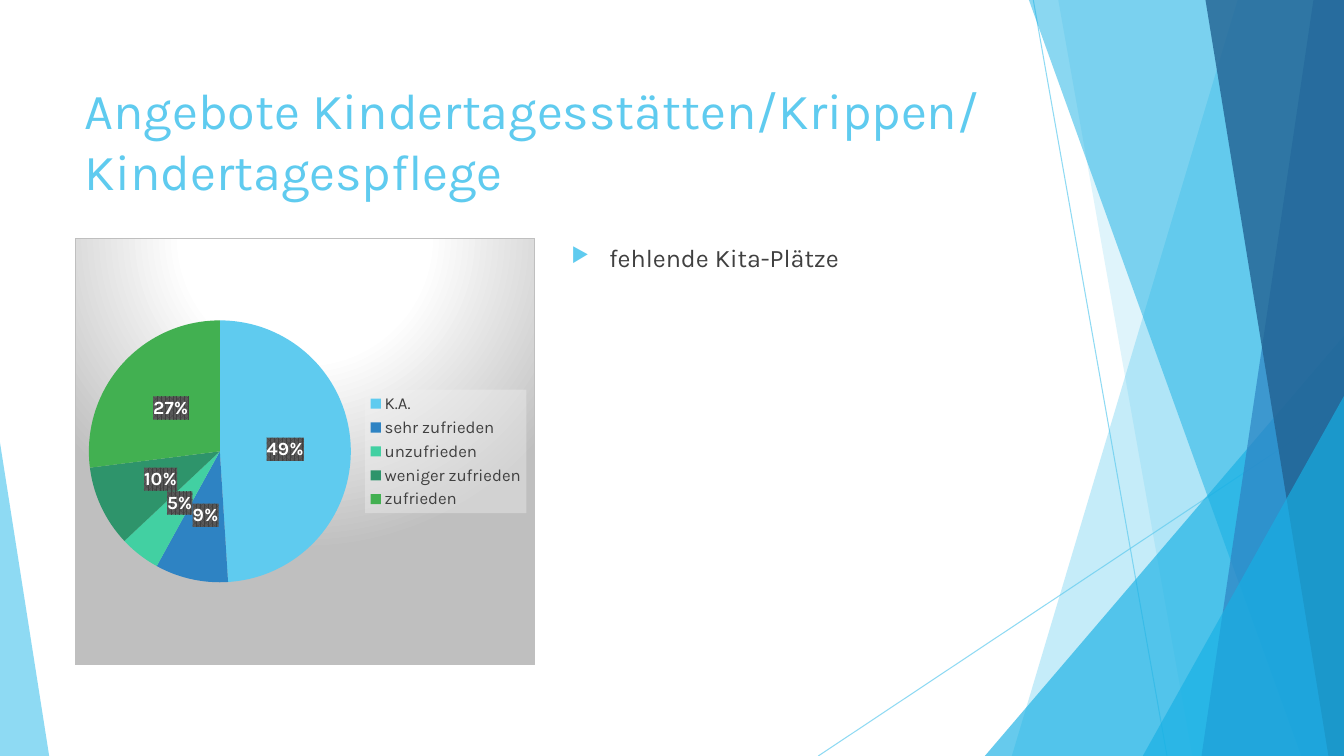
from lxml import etree
from pptx import Presentation
from pptx.chart.data import CategoryChartData
from pptx.dml.color import RGBColor
from pptx.enum.chart import XL_CHART_TYPE, XL_LABEL_POSITION, XL_LEGEND_POSITION
from pptx.enum.shapes import MSO_CONNECTOR, MSO_SHAPE
from pptx.enum.text import MSO_ANCHOR
from pptx.oxml import parse_xml
from pptx.oxml.ns import nsdecls, qn
from pptx.util import Cm, Pt

FONT = "Karla"
SKY = RGBColor(0x5F, 0xCB, 0xEF)
CYAN = RGBColor(0x17, 0xB0, 0xE4)
BLUE = RGBColor(0x2E, 0x83, 0xC3)
NAVY = RGBColor(0x22, 0x62, 0x92)
MINT = RGBColor(0x42, 0xD0, 0xA2)
TEAL = RGBColor(0x2E, 0x94, 0x6B)
GREEN = RGBColor(0x42, 0xB0, 0x51)
WHITE = RGBColor(0xFF, 0xFF, 0xFF)
DARK = RGBColor(0x40, 0x40, 0x40)
BLACK = RGBColor(0, 0, 0)

WIDTH, HEIGHT = 33.87, 19.05


def set_color(fill, color, opacity):
    """Make a fill solid, with its opacity in percent."""
    fill.solid()
    fill.fore_color.rgb = color
    clr = fill._xPr.find(".//" + qn("a:srgbClr"))
    etree.SubElement(clr, qn("a:alpha"), val=str(opacity * 1000))


def set_font(font, size, color, bold=False):
    font.name, font.size, font.bold = FONT, Pt(size), bold
    font.color.rgb = color


presentation = Presentation()
presentation.slide_width, presentation.slide_height = Cm(WIDTH), Cm(HEIGHT)
slide = presentation.slides.add_slide(presentation.slide_layouts[6])
shapes = slide.shapes

# Thin lines behind the facets
for x1, y1, x2, y2 in [(26.04, 0, 29.41, HEIGHT), (WIDTH, 10.24, 20.62, HEIGHT)]:
    line = shapes.add_connector(MSO_CONNECTOR.STRAIGHT, Cm(x1), Cm(y1), Cm(x2), Cm(y2))
    line.line.width = Pt(0.75)
    set_color(line.line.fill, SKY, 70)
    etree.SubElement(line._element.spPr, qn("a:effectLst"))

# Bands reach the right edge: top x, bottom x, color, opacity.
# Triangles: left, top, width, apex, color, opacity.
facets = [
    (31.19, 25.5, SKY, 36),
    (26.67, 30.05, SKY, 20),
    (24.82, 8.46, 9.05, 1, CYAN, 66),
    (25.93, 32.79, CYAN, 50),
    (33.1, 30.28, BLUE, 70),
    (30.38, 33.48, NAVY, 80),
    (28.8, 9.98, 5.07, 1, CYAN, 66),
    (0, 11.15, 1.24, 0, SKY, 70),
]
for *geometry, color, opacity in facets:
    if len(geometry) == 2:
        top_x, bottom_x = geometry
        builder = shapes.build_freeform(Cm(top_x), Cm(0))
        builder.add_line_segments(
            [(Cm(WIDTH), Cm(0)), (Cm(WIDTH), Cm(HEIGHT)), (Cm(bottom_x), Cm(HEIGHT))])
        facet = builder.convert_to_shape()
    else:
        left, top, width, apex = geometry
        facet = shapes.add_shape(MSO_SHAPE.ISOSCELES_TRIANGLE, Cm(left), Cm(top),
                                 Cm(width), Cm(HEIGHT - top))
        facet.adjustments[0] = apex
    set_color(facet.fill, color, opacity)
    facet.line.fill.background()
    facet.shadow.inherit = False

# Title and bullet
texts = [
    ("Angebote Kindertagesstätten/Krippen/ Kindertagespflege",
     (1.88, 1.7, 23.88, 3.66), 36, SKY, MSO_ANCHOR.MIDDLE),
    ("fehlende Kita-Plätze", (14.15, 5.99, 11.63, 10.77), 18, DARK, MSO_ANCHOR.TOP),
]
for text, box, size, color, anchor in texts:
    frame = shapes.add_textbox(*map(Cm, box)).text_frame
    frame.word_wrap = True
    frame.vertical_anchor = anchor
    paragraph = frame.paragraphs[0]
    paragraph.text = text
    set_font(paragraph.runs[0].font, size, color)

paragraph.space_before = Pt(10)
properties = paragraph._p.get_or_add_pPr()
properties.set("marL", str(Cm(0.95)))
properties.set("indent", str(-Cm(0.95)))
bullet_color = etree.SubElement(properties, qn("a:buClr"))
etree.SubElement(bullet_color, qn("a:srgbClr"), val=str(SKY))
etree.SubElement(properties, qn("a:buSzPct"), val="80000")
etree.SubElement(properties, qn("a:buChar"), char="▶")

# Pie chart
answers = {
    "K.A.": (49, SKY),
    "sehr zufrieden": (9, BLUE),
    "unzufrieden": (5, MINT),
    "weniger zufrieden": (10, TEAL),
    "zufrieden": (27, GREEN),
}
data = CategoryChartData()
data.categories = list(answers)
data.add_series("Series 1", [value for value, _ in answers.values()])
chart = shapes.add_chart(XL_CHART_TYPE.PIE, Cm(1.88), Cm(5.99), Cm(11.61), Cm(10.77), data).chart
chart.has_title = False
set_font(chart.font, 10, BLACK)
chart.has_legend = True
legend = chart.legend
legend.position = XL_LEGEND_POSITION.RIGHT
legend.include_in_layout = False
set_font(legend.font, 12, DARK)

plot = chart.plots[0]
plot.vary_by_categories = True
for index, (_, color) in enumerate(answers.values()):
    fill = plot.series[0].points[index].format.fill
    fill.solid()
    fill.fore_color.rgb = color

labels = plot.series[0].data_labels
labels.show_percentage = True
labels.show_value = False
labels.number_format = "0%"
labels.number_format_is_linked = False
labels.position = XL_LABEL_POSITION.CENTER
set_font(labels.font, 13.3, WHITE, bold=True)

# Backgrounds of chart, legend and labels
backgrounds = [
    (chart._chartSpace,
     '<a:gradFill><a:gsLst><a:gs pos="0"><a:srgbClr val="FFFFFF"/></a:gs>'
     '<a:gs pos="39000"><a:srgbClr val="FFFFFF"/></a:gs>'
     '<a:gs pos="100000"><a:srgbClr val="BFBFBF"/></a:gs></a:gsLst>'
     '<a:path path="circle"><a:fillToRect l="50000" t="-80000" r="50000" b="180000"/></a:path>'
     '</a:gradFill><a:ln w="9525"><a:solidFill><a:srgbClr val="BFBFBF"/></a:solidFill></a:ln>'),
    (legend._element,
     '<a:solidFill><a:srgbClr val="F2F2F2"><a:alpha val="39000"/></a:srgbClr></a:solidFill>'),
    (labels._element,
     '<a:pattFill prst="pct75"><a:fgClr><a:srgbClr val="404040"/></a:fgClr>'
     '<a:bgClr><a:srgbClr val="595959"/></a:bgClr></a:pattFill>'),
]
for element, content in backgrounds:
    background = parse_xml(f'<c:spPr {nsdecls("c", "a")}>{content}</c:spPr>')
    element.find(qn("c:txPr")).addprevious(background)

# Pie position as fractions of the chart
plot_area = plot._element.getparent()
for old_layout in plot_area.findall(qn("c:layout")):
    plot_area.remove(old_layout)
layout = etree.Element(qn("c:layout"))
plot_area.insert(0, layout)
manual = etree.SubElement(layout, qn("c:manualLayout"))
for tag, value in [("layoutTarget", "inner"), ("xMode", "edge"), ("yMode", "edge"),
                   ("x", "0.03"), ("y", "0.19"), ("w", "0.57"), ("h", "0.62")]:
    etree.SubElement(manual, qn("c:" + tag), val=value)

presentation.save("out.pptx")
